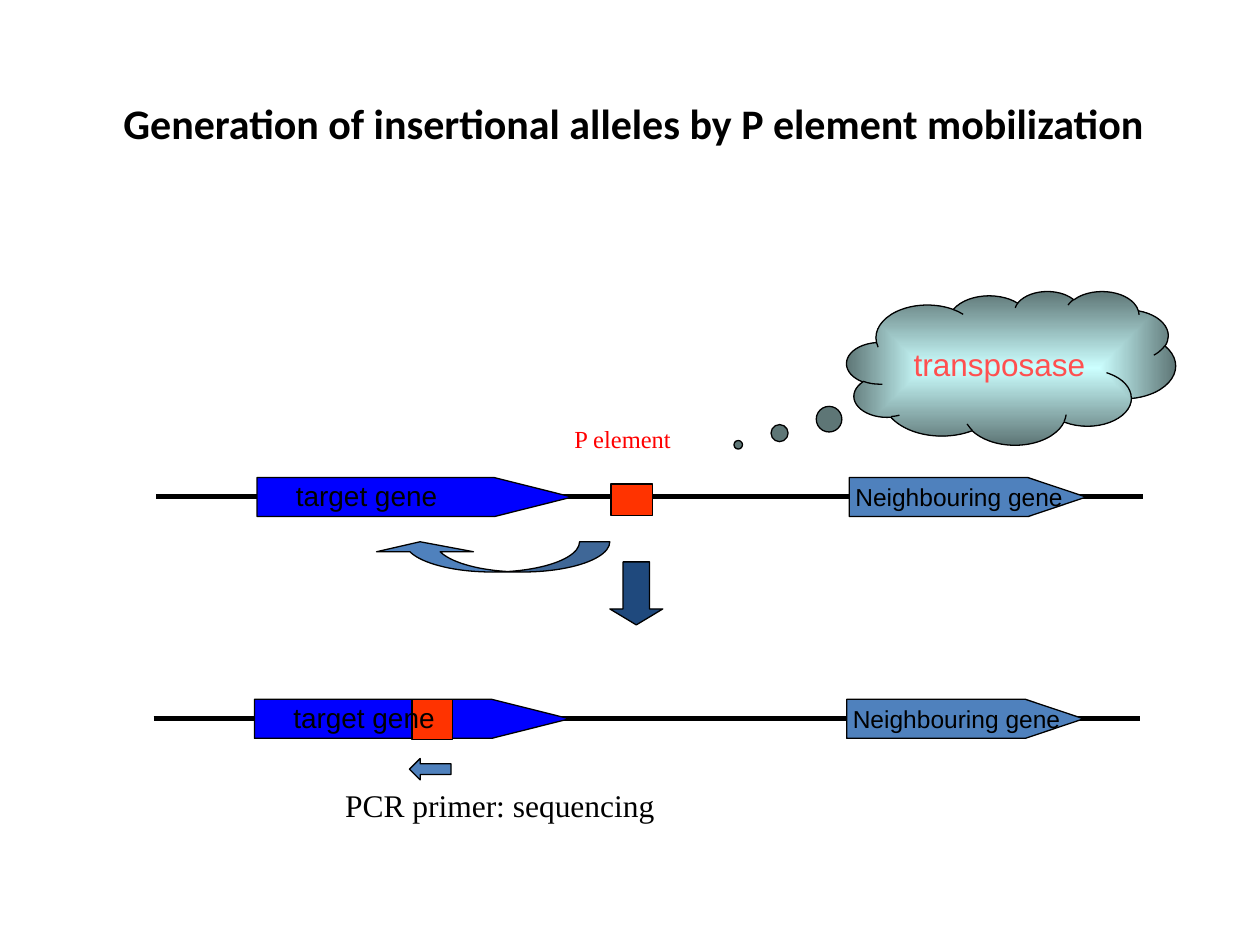
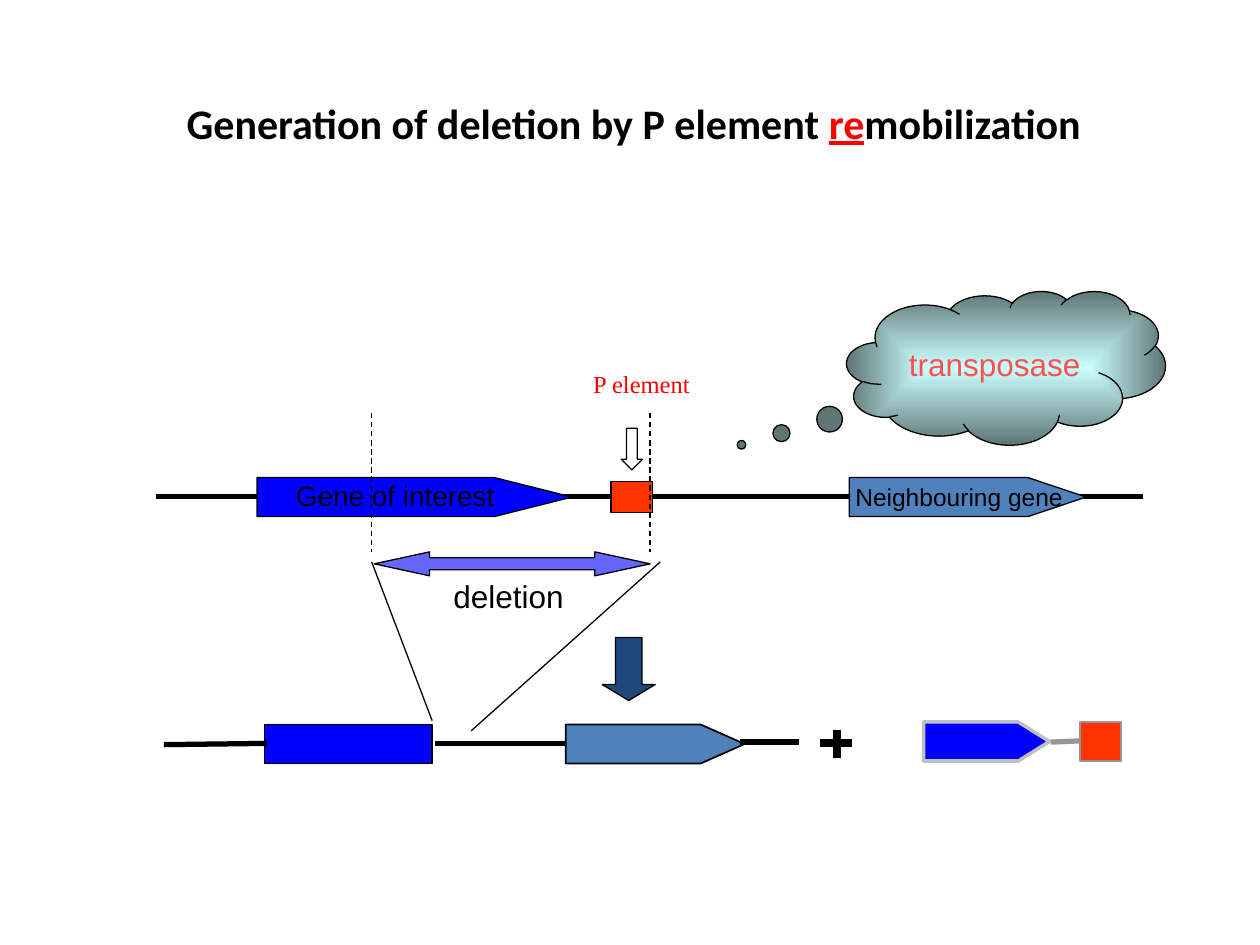
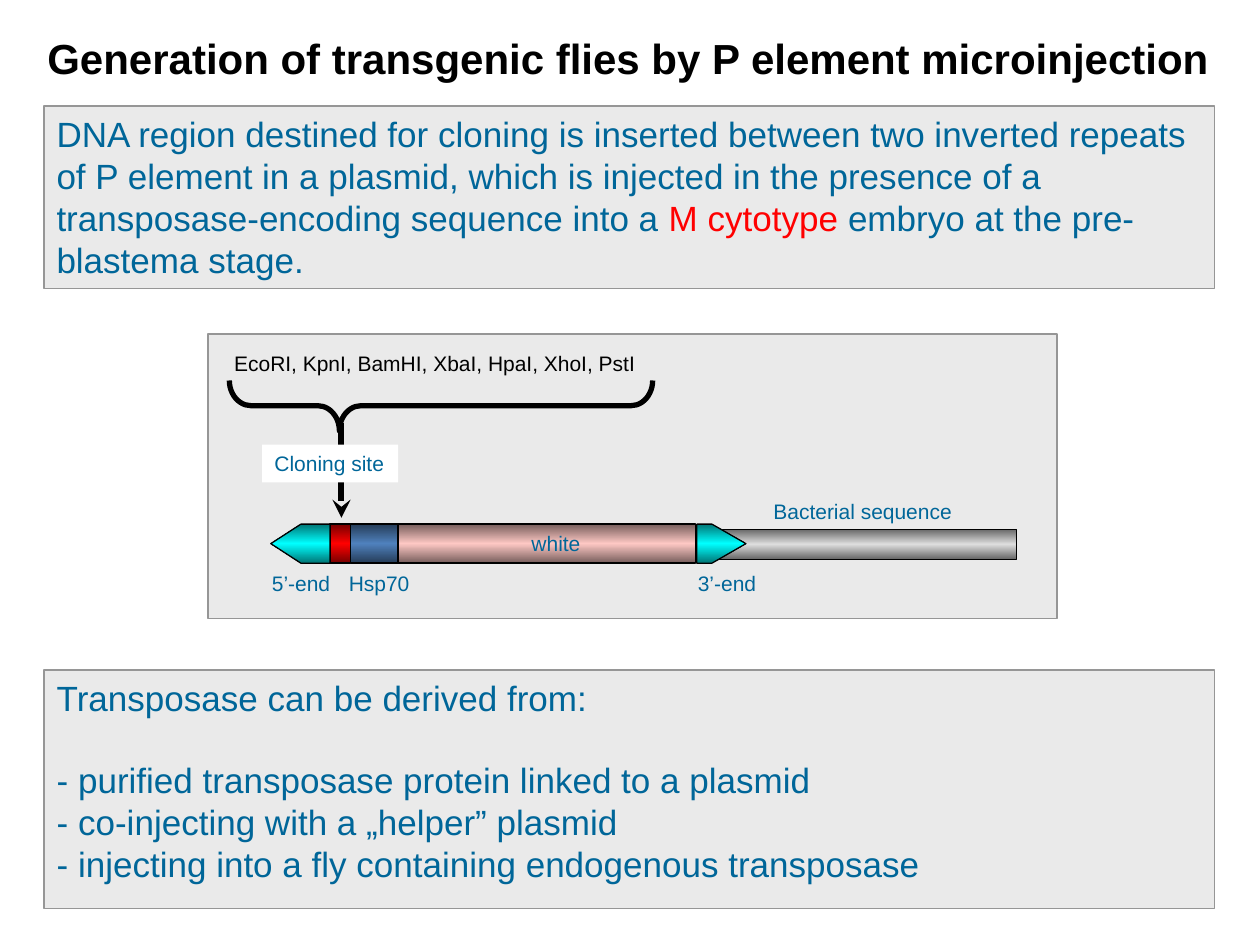
import dataclasses

import pptx
import pptx.dml.color
import pptx.enum.dml
import pptx.enum.shapes
import pptx.enum.text
import pptx.oxml
import pptx.oxml.ns
import pptx.util

SHAPE = pptx.enum.shapes.MSO_SHAPE
ALIGN = pptx.enum.text.PP_ALIGN
ANCHOR = pptx.enum.text.MSO_ANCHOR
DASH = pptx.enum.dml.MSO_LINE.DASH


@dataclasses.dataclass(frozen=True)
class Theme:
    black: str = "000000"
    white: str = "FFFFFF"
    red: str = "FF0000"
    gene: str = "0000FF"
    neighbour: str = "4F81BD"
    element: str = "FF3300"
    step: str = "1F497D"
    deletion: str = "6666FF"
    enzyme: str = "FF5050"
    panel: str = "EAEAEA"
    rim: str = "969696"
    excised_rim: str = "C0C0C0"
    body: str = "006699"
    cloud: tuple = ("CCFFFF", "5E7676")
    site: tuple = ("760000", "FF0000", "760000")
    promoter: tuple = ("253C57", "4F81BD", "253C57")
    marker: tuple = ("765D5B", "FEC8C4", "765D5B")
    bacterial: tuple = ("666666", "DDDDDD", "666666")
    repeat: tuple = ("007676", "00FFFF", "007676")
    sans: str = "Arial"
    serif: str = "Times New Roman"
    heading: str = "Calibri"
    title_size: int = 24
    panel_size: int = 20
    note_size: int = 18
    gene_size: int = 16
    label_size: int = 14
    map_size: int = 12


class Deck:
    """Holds the theme and the current slide, and draws each kind of element."""

    scale = 9144

    def __init__(self, theme):
        self.theme = theme
        self.show = pptx.Presentation()
        self.show.slide_width, self.show.slide_height = self.emu(1000, 750)
        self.slide = None

    def emu(self, *lengths):
        return [pptx.util.Emu(length * self.scale) for length in lengths]

    def apply(self, target, values):
        for name, value in values.items():
            if name == "color":
                target.color.rgb = pptx.dml.color.RGBColor.from_string(value)
            else:
                setattr(target, name, value)

    def font(self, size, color=None, name=None, **extra):
        return {"size": pptx.util.Pt(size), "color": color or self.theme.black,
                "name": name or self.theme.sans, **extra}

    def start(self, layout):
        self.slide = self.show.slides.add_slide(self.show.slide_layouts[layout])

    def place(self, target, box):
        self.apply(target, dict(zip(("left", "top", "width", "height"), self.emu(*box))))

    def letter(self, target, paragraphs, font, align=ALIGN.LEFT, anchor=ANCHOR.TOP, wrap=True):
        frame = target.text_frame
        self.apply(frame, {"word_wrap": wrap, "vertical_anchor": anchor,
                           "auto_size": pptx.enum.text.MSO_AUTO_SIZE.NONE})
        for number, runs in enumerate(paragraphs):
            paragraph = frame.add_paragraph() if number else frame.paragraphs[0]
            paragraph.alignment = align
            for words, changes in [(runs, {})] if isinstance(runs, str) else runs:
                run = paragraph.add_run()
                run.text = words
                self.apply(run.font, {**font, **changes})

    def title(self, box, runs, name):
        heading = self.slide.shapes.title
        self.place(heading, box)
        self.letter(heading, [runs], self.font(self.theme.title_size, name=name, bold=True),
                    ALIGN.CENTER, ANCHOR.MIDDLE)

    def text(self, box, words, font, wrap=True):
        label = self.slide.shapes.add_textbox(*self.emu(*box))
        self.letter(label, [words], font, wrap=wrap)

    def listing(self, box, paragraphs, font, gap):
        body = self.slide.placeholders[1]
        self.place(body, box)
        self.paint(body, self.theme.panel, self.theme.rim, 1)
        self.letter(body, paragraphs, font)
        for number, paragraph in enumerate(body.text_frame.paragraphs):
            properties = paragraph._p.get_or_add_pPr()
            properties.set("marL", "0")
            properties.set("indent", "0")
            paragraph.space_before = pptx.util.Pt(gap if number == 1 else 0)
            properties.append(pptx.oxml.parse_xml(
                f'<a:buNone {pptx.oxml.ns.nsdecls("a")}/>'))

    def paint(self, target, fill, rim, weight):
        if fill is None:
            target.fill.background()
        elif isinstance(fill, tuple):
            self.blend(target, fill)
        else:
            target.fill.solid()
            target.fill.fore_color.rgb = pptx.dml.color.RGBColor.from_string(fill)
        if rim is None:
            target.line.fill.background()
        else:
            self.apply(target.line, {"color": rim, "width": pptx.util.Pt(weight)})

    def blend(self, target, colours):
        last = len(colours) - 1
        stops = "".join(
            f'<a:gs pos="{100000 * number // last}"><a:srgbClr val="{colour}"/></a:gs>'
            for number, colour in enumerate(colours))
        centre = " ".join(f'{side}="50000"' for side in "ltrb")
        course = ('<a:lin ang="5400000" scaled="1"/>' if last == 2 else
                  f'<a:path path="rect"><a:fillToRect {centre}/></a:path>')
        target._element.spPr.insert(2, pptx.oxml.parse_xml(
            f'<a:gradFill {pptx.oxml.ns.nsdecls("a")} rotWithShape="1">'
            f'<a:gsLst>{stops}</a:gsLst>{course}</a:gradFill>'))

    def shape(self, kind, box, fill, adjust=(), rim=Theme.black, weight=0.75,
              flip=False, rotation=0):
        drawn = self.slide.shapes.add_shape(kind, *self.emu(*box))
        for number, value in enumerate(adjust):
            drawn.adjustments[number] = value
        drawn.rotation = rotation
        if flip:
            drawn._element.spPr.find(pptx.oxml.ns.qn("a:xfrm")).set("flipH", "1")
        self.paint(drawn, fill, rim, weight)
        drawn.shadow.inherit = False
        return drawn

    def line(self, start, end, weight=3, color=Theme.black, dash=None, arrow=False):
        drawn = self.slide.shapes.add_connector(
            pptx.enum.shapes.MSO_CONNECTOR.STRAIGHT, *self.emu(*start, *end))
        self.apply(drawn.line, {"color": color, "width": pptx.util.Pt(weight),
                                "dash_style": dash})
        space = pptx.oxml.ns.nsdecls("a")
        if arrow:
            drawn.get_or_add_ln().append(
                pptx.oxml.parse_xml(f'<a:tailEnd {space} type="stealth"/>'))
        drawn._element.spPr.append(pptx.oxml.parse_xml(f"<a:effectLst {space}/>"))


def locus(deck, x, y, gene, element):
    theme = deck.theme
    deck.line((x, y), (x + 783, y))
    deck.shape(SHAPE.PENTAGON, (x + 80, y - 15, 250, 31), theme.gene, [1.99])
    deck.shape(SHAPE.PENTAGON, (x + 550, y - 15, 188, 31), theme.neighbour, [1.49])
    deck.shape(SHAPE.RECTANGLE, element, theme.element)
    deck.text((x + 101, y - 19, 208, 37), gene, deck.font(theme.gene_size))
    deck.text((x + 545, y - 16, 217, 34), "Neighbouring gene", deck.font(theme.label_size))


def mobilization(deck, runs, gene, element, element_label, cloud_width, step):
    theme = deck.theme
    deck.start(5)
    deck.title((25, 50, 956, 94), runs, theme.heading)
    deck.shape(SHAPE.DOWN_ARROW, (*step, 42, 50), theme.step, [0.5, 0.3])
    locus(deck, 124, 394, gene, element)
    deck.text(element_label, "P element", deck.font(theme.label_size, theme.red, theme.serif))
    cloud = deck.shape(SHAPE.CLOUD_CALLOUT, (672, 231, cloud_width, 122), theme.cloud,
                       [-0.83, 0.5])
    deck.letter(cloud, ["transposase"], deck.font(theme.note_size, theme.enzyme),
                ALIGN.CENTER, ANCHOR.MIDDLE)


def insertion_slide(deck):
    theme = deck.theme
    mobilization(deck, "Generation of insertional alleles by P element mobilization",
                 "target gene", (485, 384, 33, 25), (446, 332, 119, 34), 261, (484, 446))
    locus(deck, 122, 570, "target gene", (327, 555, 32, 32))
    deck.shape(SHAPE.LEFT_ARROW, (325, 602, 33, 17), theme.neighbour, [0.5, 0.5])
    deck.text((264, 619, 323, 40), "PCR primer: sequencing",
              deck.font(theme.note_size, name=theme.serif))
    deck.shape(SHAPE.CURVED_UP_ARROW, (295, 430, 189, 24), theme.neighbour,
               [1.6, 3.2, 0.33], flip=True)


def deletion_slide(deck):
    theme = deck.theme
    mobilization(deck, [("Generation of deletion by P element ", {}),
                        ("re", {"color": theme.red, "underline": True}),
                        ("mobilization", {})],
                 "Gene of interest", (485, 382, 33, 25), (461, 288, 102, 34), 253, (478, 506))
    deck.shape(SHAPE.DOWN_ARROW, (493, 340, 17, 33), theme.white, [0.5, 0.5])
    deck.shape(SHAPE.LEFT_RIGHT_ARROW, (297, 438, 219, 19), theme.deletion, [0.5, 2.31])
    deck.text((350, 453, 109, 40), "deletion", deck.font(theme.note_size), wrap=False)
    for edge in (295, 516):
        deck.line((edge, 328), (edge, 438), 0.75, dash=DASH)
    for outer, inner in (((295, 446), (343, 572)), ((524, 446), (374, 580))):
        deck.line(outer, inner, 0.75)

    deck.shape(SHAPE.RECTANGLE, (210, 575, 133, 31), theme.gene, weight=1)
    deck.shape(SHAPE.PENTAGON, (449, 575, 142, 31), theme.neighbour, [1.13], weight=1)
    for start, end in (((212, 590), (130, 591)), ((345, 590), (449, 590)),
                       ((587, 589), (634, 589))):
        deck.line(start, end)
    for start, end in (((664, 579), (664, 602)), ((651, 590), (676, 590))):
        deck.line(start, end, 4.5)

    deck.shape(SHAPE.PENTAGON, (733, 573, 100, 31), theme.gene, [0.8], theme.excised_rim, 2)
    deck.shape(SHAPE.RECTANGLE, (857, 573, 33, 31), theme.element, rim=theme.rim, weight=1)
    deck.line((834, 589), (857, 588), color=theme.rim)


def vector_map(deck):
    theme = deck.theme
    label = deck.font(theme.map_size, theme.body)
    deck.shape(SHAPE.RECTANGLE, (165, 265, 674, 226), theme.panel, rim=theme.rim, weight=1)
    for box, fill in (((262, 416, 16, 31), theme.site),
                      ((278, 416, 39, 31), theme.promoter),
                      ((316, 416, 236, 31), theme.marker),
                      ((571, 420, 236, 24), theme.bacterial)):
        deck.shape(SHAPE.RECTANGLE, box, fill)
    deck.shape(SHAPE.PENTAGON, (215, 416, 47, 31), theme.repeat, [0.77], flip=True)
    deck.shape(SHAPE.PENTAGON, (553, 416, 39, 31), theme.repeat, [0.87])
    for left, top, width, words in ((206, 448, 67, "5’-end"), (544, 448, 67, "3’-end"),
                                    (412, 416, 63, "white"),
                                    (604, 391, 163, "Bacterial sequence"),
                                    (267, 448, 70, "Hsp70")):
        deck.text((left, top, width, 30), words, label, wrap=False)
    deck.shape(SHAPE.RIGHT_BRACE, (330, 154, 40, 336), None, [0.43, 0.74], weight=3,
               rotation=90)
    deck.text((176, 273, 352, 30), "EcoRI, KpnI, BamHI, XbaI, HpaI, XhoI, PstI",
              deck.font(theme.map_size), wrap=False)
    deck.line((271, 336), (271, 411), 3.5, arrow=True)
    cloning_site = deck.shape(SHAPE.RECTANGLE, (208, 353, 108, 30), theme.white, rim=None)
    deck.letter(cloning_site, ["Cloning site"], label, wrap=False)


def microinjection_slide(deck):
    theme = deck.theme
    font = deck.font(theme.panel_size, theme.body)
    deck.start(1)
    deck.title((16, 21, 965, 50), "Generation of transgenic flies by P element microinjection",
               theme.sans)
    method = deck.shape(SHAPE.RECTANGLE, (35, 84, 929, 145), theme.panel, rim=theme.rim,
                        weight=1)
    deck.letter(method, [[
        ("DNA region destined for cloning is inserted between two inverted repeats of "
         "P element in a plasmid, which is injected in the presence of a "
         "transposase-encoding sequence into a ", {}),
        ("M cytotype ", {"color": theme.red}),
        ("embryo at the pre-blastema stage.", {})]], font)
    deck.listing((35, 532, 929, 189), [
        "Transposase can be derived from:",
        "- purified transposase protein linked to a plasmid",
        "- co-injecting with a „helper” plasmid",
        "- injecting into a fly containing endogenous transposase"], font, 23)
    vector_map(deck)


def main():
    deck = Deck(Theme())
    insertion_slide(deck)
    deletion_slide(deck)
    microinjection_slide(deck)
    deck.show.save("out.pptx")


if __name__ == "__main__":
    main()
